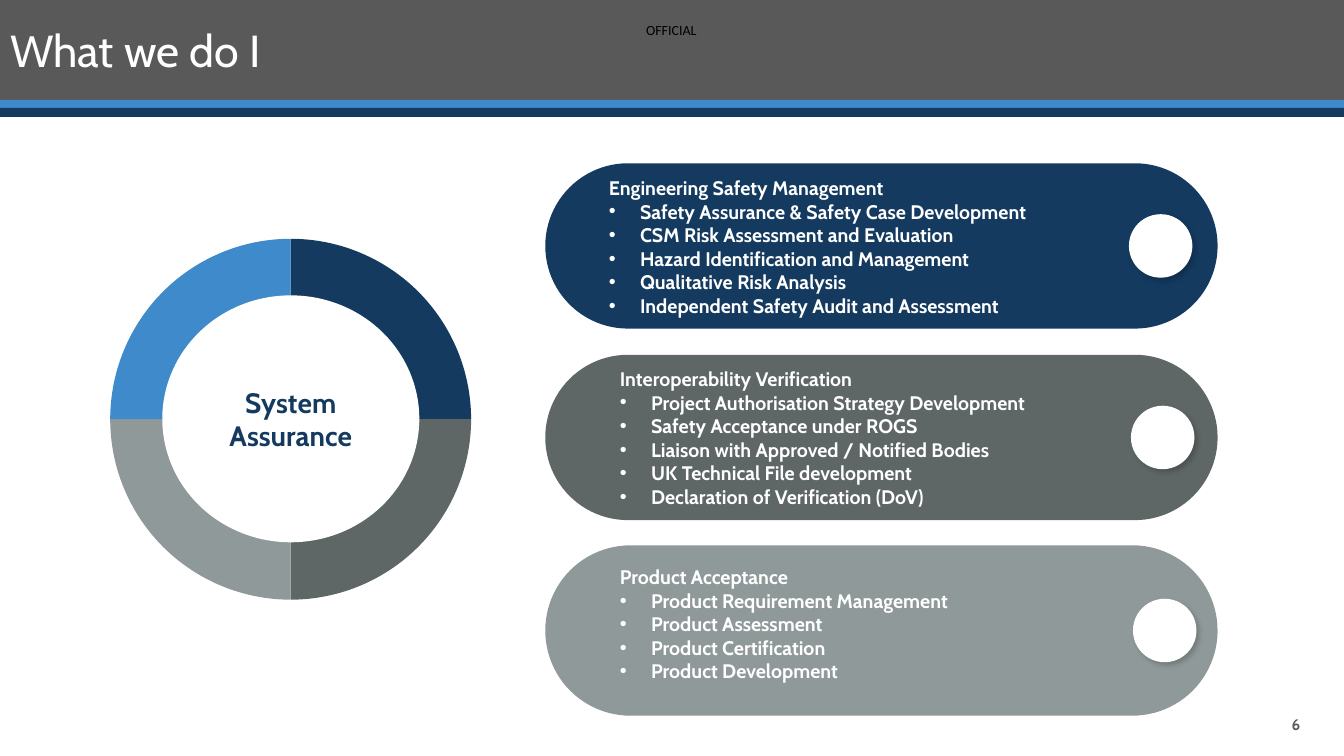
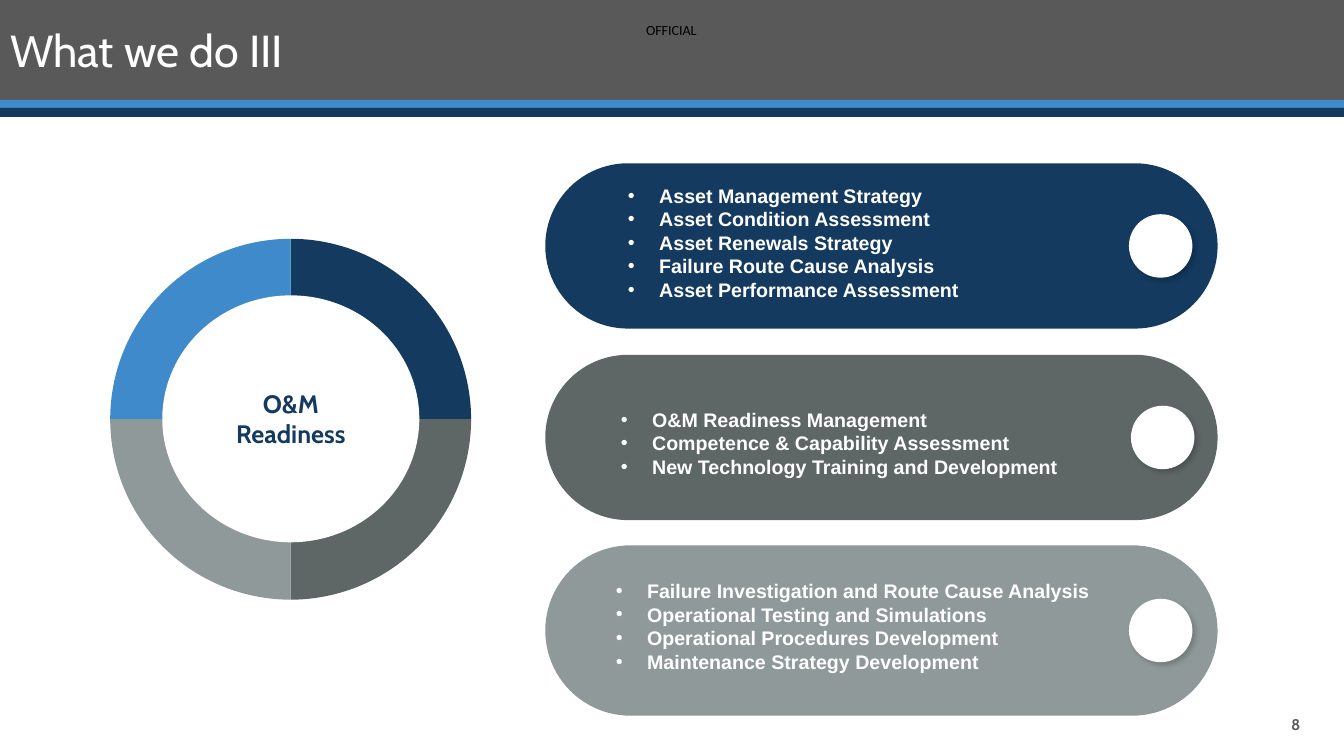
from lxml import etree
from pptx import Presentation
from pptx import util as u
from pptx.chart.data import CategoryChartData
from pptx.dml.color import RGBColor
from pptx.enum import chart as charts, shapes, text
from pptx.oxml import parse_xml
from pptx.oxml.ns import nsdecls, qn

GREY = RGBColor(0x59, 0x59, 0x59)
SKY = RGBColor(0x3E, 0x8A, 0xCA)
NAVY = RGBColor(0x14, 0x3A, 0x60)
SLATE = RGBColor(0x5F, 0x66, 0x66)
MIST = RGBColor(0x90, 0x99, 0x99)
WHITE = RGBColor(0xFF, 0xFF, 0xFF)
BLACK = RGBColor(0, 0, 0)
FONT = "Cabin"
LEFT, CENTER, RIGHT = text.PP_ALIGN.LEFT, text.PP_ALIGN.CENTER, text.PP_ALIGN.RIGHT
RECT, PILL, OVAL = (shapes.MSO_SHAPE.RECTANGLE, shapes.MSO_SHAPE.ROUNDED_RECTANGLE,
                    shapes.MSO_SHAPE.OVAL)

# Slide and grid: 75 rows of square cells
deck = Presentation()
deck.slide_height = u.Inches(7.5)
deck.slide_width = deck.slide_height * 16 // 9
CELL = deck.slide_height // 75
COLUMNS = deck.slide_width / CELL
LINE = 2.35  # rows per line of 14 pt text

# Pills: top row, rows high, colour
PILLS = [(16.2, 16.4, NAVY), (35.2, 16.4, SLATE), (54.1, 16.9, MIST)]
PILL_LEFT, PILL_WIDTH, DOT = 54.1, 66.7, 6.3

# Pages: title, number, ring label and size, list font,
# panels (dot column, text column, text middle row, heading, bullets)
PAGES = [
    ("What we do I", "6", "System Assurance", 20, FONT, [
        (112, 60.4, 24.45, "Engineering Safety Management", [
            "Safety Assurance & Safety Case Development",
            "CSM Risk Assessment and Evaluation",
            "Hazard Identification and Management",
            "Qualitative Risk Analysis",
            "Independent Safety Audit and Assessment"]),
        (112.2, 61.5, 43.4, "Interoperability Verification", [
            "Project Authorisation Strategy Development",
            "Safety Acceptance under ROGS",
            "Liaison with Approved / Notified Bodies",
            "UK Technical File development",
            "Declaration of Verification (DoV)"]),
        (112.4, 61.5, 61.9, "Product Acceptance", [
            "Product Requirement Management",
            "Product Assessment",
            "Product Certification",
            "Product Development"])]),
    ("What we do III", "8", "O&M Readiness", 18, "Arial", [
        (112, 62.3, 24.05, None, [
            "Asset Management Strategy",
            "Asset Condition Assessment",
            "Asset Renewals Strategy",
            "Failure Route Cause Analysis",
            "Asset Performance Assessment"]),
        (112.2, 61.6, 43.95, None, [
            "O&M Readiness Management",
            "Competence & Capability Assessment",
            "New Technology Training and Development"]),
        (112, 61.1, 62.1, None, [
            "Failure Investigation and Route Cause Analysis",
            "Operational Testing and Simulations",
            "Operational Procedures Development",
            "Maintenance Strategy Development"])]),
]


def add_box(page, kind, left, top, width, height, fill=None):
    """Add a plain shape, or a text box when kind is None, on the grid."""
    place = [round(cells * CELL) for cells in (left, top, width, height)]
    if kind is None:
        return page.shapes.add_textbox(*place)
    box = page.shapes.add_shape(kind, *place)
    box.shadow.inherit = False
    box.fill.solid()
    box.fill.fore_color.rgb = fill
    box.line.fill.background()
    return box


def write(box, words, size, colour, font=FONT, bold=False, align=LEFT,
          anchor=text.MSO_ANCHOR.MIDDLE, inset=True):
    """Set the text of a box and format every run."""
    frame = box.text_frame
    frame.text = words
    frame.word_wrap = True
    frame.auto_size = text.MSO_AUTO_SIZE.NONE
    frame.vertical_anchor = anchor
    if not inset:
        frame.margin_left = frame.margin_right = frame.margin_top = frame.margin_bottom = 0
    for para in frame.paragraphs:
        para.alignment = align
        for span in para.runs:
            span.font.size = u.Pt(size)
            span.font.name = font
            span.font.bold = bold
            span.font.color.rgb = colour
    return frame


layout = deck.slide_layouts[5]
pages = [deck.slides.add_slide(layout) for _ in PAGES]

# Shared header: bands and marking, moved onto the layout
header = [add_box(pages[0], RECT, 0, top, COLUMNS, height, fill)
          for top, height, fill in ((0, 9.9, GREY), (9.9, 0.9, SKY), (10.7, 0.9, NAVY))]
marking = add_box(pages[0], None, 64.1, 2.1, 5.3, 1.7)
write(marking, "OFFICIAL", 10, BLACK, "Calibri", inset=False).word_wrap = False
for box in header + [marking]:
    layout.shapes.element.append(box.element)

for page, (title, number, label, label_size, list_font, panels) in zip(pages, PAGES):
    # Title and page number
    heading = page.shapes.title
    heading.left = heading.top = 0
    heading.width, heading.height = 105 * CELL, round(8.2 * CELL)
    frame = write(heading, title, 32, WHITE, anchor=text.MSO_ANCHOR.BOTTOM)
    frame.paragraphs[0].line_spacing = 0.9
    write(add_box(page, None, 115, 70.4, 15, 3), number, 11, GREY, bold=True, align=RIGHT)

    # Pills with dots and lists
    for (top, height, fill), (dot_left, left, middle, topic, items) in zip(PILLS, panels):
        pill = add_box(page, PILL, PILL_LEFT, top, PILL_WIDTH, height, fill)
        pill.adjustments[0] = 0.5
        dot = add_box(page, OVAL, dot_left, top + (height - DOT) / 2, DOT, DOT, WHITE)
        dot.element.spPr.find(qn("a:effectLst")).append(parse_xml(
            f'<a:outerShdw {nsdecls("a")} blurRad="50800" dist="38100" dir="2700000">'
            '<a:srgbClr val="000000"><a:alpha val="20000"/></a:srgbClr></a:outerShdw>'))

        lines = [topic] + items if topic else items
        rows = len(lines) * LINE
        box = add_box(page, None, left, middle - rows / 2, 50, rows)
        frame = write(box, "\n".join(lines), 14, WHITE, list_font, bold=True, inset=False)
        for para in frame.paragraphs[len(lines) - len(items):]:
            props = para._p.get_or_add_pPr()
            props.set("marL", str(u.Inches(0.31)))
            props.set("indent", str(-u.Inches(0.31)))
            etree.SubElement(props, qn("a:buFont")).set("typeface", "Arial")
            etree.SubElement(props, qn("a:buChar")).set("char", "•")

    # Ring: pie chart with a labelled disc on top
    data = CategoryChartData()
    data.categories = ["1", "2", "3", "4"]
    data.add_series("Series 1", [25] * 4)
    place = [round(cells * CELL) for cells in (8.2, 22.3, 41.4, 38.6)]
    pie = page.shapes.add_chart(charts.XL_CHART_TYPE.PIE, *place, data).chart
    pie.has_legend = pie.has_title = False
    pie.font.size, pie.font.name = u.Pt(10), "Vollkorn"
    pie.font.color.rgb = GREY
    pie.plots[0].vary_by_categories = True
    for index, colour in enumerate((NAVY, SLATE, MIST, SKY)):
        slice_format = pie.plots[0].series[0].points[index].format
        slice_format.fill.solid()
        slice_format.fill.fore_color.rgb = colour
        slice_format.line.fill.background()
    plot = pie.element.find(".//" + qn("c:plotArea"))
    for old in plot.findall(qn("c:layout")):
        plot.remove(old)
    plot.insert(0, parse_xml(
        f'<c:layout {nsdecls("c")}><c:manualLayout><c:layoutTarget val="inner"/>'
        '<c:xMode val="edge"/><c:yMode val="edge"/><c:x val="0.066"/><c:y val="0.036"/>'
        '<c:w val="0.865"/><c:h val="0.928"/></c:manualLayout></c:layout>'))
    disc = add_box(page, OVAL, 16.1, 29.3, 25.5, 24.5, WHITE)
    write(disc, label, label_size, NAVY, bold=True, align=CENTER)

deck.save("out.pptx")
